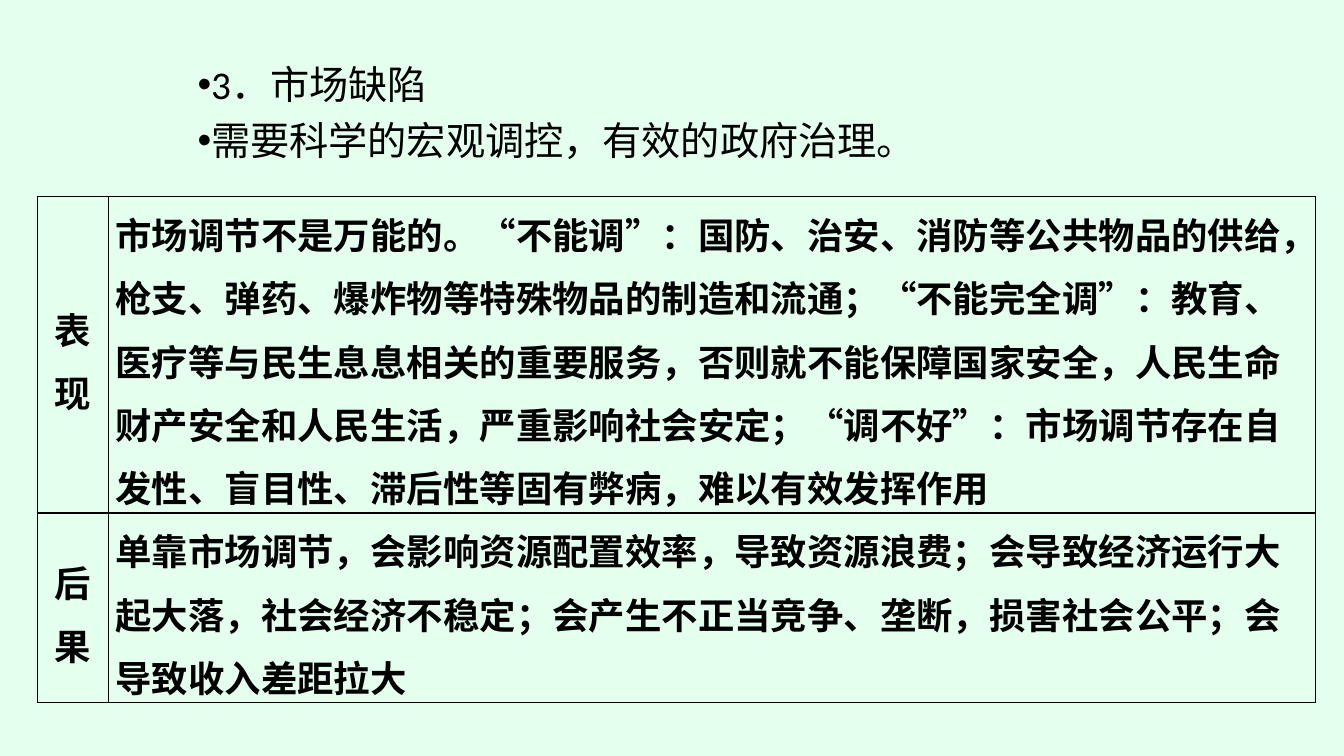
from lxml.etree import SubElement
from pptx import Presentation
from pptx.dml.color import RGBColor
from pptx.enum.text import MSO_ANCHOR as Anchor, PP_ALIGN as Align
from pptx.oxml import parse_xml
from pptx.oxml.ns import nsdecls, qn
from pptx.util import Pt

MINT = RGBColor(0xE4, 0xFF, 0xEE)
BLACK = RGBColor(0, 0, 0)

HEADINGS = ["3．市场缺陷", "需要科学的宏观调控，有效的政府治理。"]
ROWS = [
    (
        "表现",
        "市场调节不是万能的。“不能调”：国防、治安、消防等公共物品的供给，"
        "枪支、弹药、爆炸物等特殊物品的制造和流通；“不能完全调”：教育、"
        "医疗等与民生息息相关的重要服务，否则就不能保障国家安全，人民生命"
        "财产安全和人民生活，严重影响社会安定；“调不好”：市场调节存在自"
        "发性、盲目性、滞后性等固有弊病，难以有效发挥作用",
    ),
    (
        "后果",
        "单靠市场调节，会影响资源配置效率，导致资源浪费；会导致经济运行大"
        "起大落，社会经济不稳定；会产生不正当竞争、垄断，损害社会公平；会"
        "导致收入差距拉大",
    ),
]
COLUMN_WIDTHS = [Pt(51), Pt(862)]
ROW_HEIGHTS = [Pt(226), Pt(135.5)]


def style_font(font, size, latin, east_asian, bold=False):
    font.size = Pt(size)
    font.bold = bold
    font.name = latin
    font.color.rgb = BLACK
    SubElement(font._element, qn("a:ea"), typeface=east_asian)


def write_lines(frame, lines):
    frame.text = "\n".join(lines)
    return frame.paragraphs


def add_bullet(para):
    properties = para._p.get_or_add_pPr()
    properties.set("marL", str(Pt(18)))
    properties.set("indent", str(Pt(52)))
    SubElement(properties, qn("a:buFont"), typeface="Arial")
    SubElement(properties, qn("a:buChar"), char="•")


def add_headings(page):
    box = page.shapes.add_textbox(Pt(64), Pt(43), Pt(896), Pt(150))
    box.text_frame.word_wrap = True
    for para in write_lines(box.text_frame, HEADINGS):
        para.line_spacing = 0.9
        para.space_before = Pt(10)
        add_bullet(para)
        style_font(para.font, 28, "Calibri", "Calibri")


def add_borders(cell):
    properties = cell._tc.get_or_add_tcPr()
    for position, side in enumerate(("lnL", "lnR", "lnT", "lnB")):
        border = parse_xml(
            f'<a:{side} {nsdecls("a")} w="{Pt(1)}"><a:solidFill>'
            f'<a:srgbClr val="{BLACK}"/></a:solidFill></a:{side}>'
        )
        properties.insert(position, border)


def fill_cell(cell, lines, align):
    cell.fill.background()
    add_borders(cell)
    cell.vertical_anchor = Anchor.MIDDLE
    cell.margin_left = cell.margin_right = Pt(5)
    cell.margin_top = cell.margin_bottom = 0
    for para in write_lines(cell.text_frame, lines):
        para.alignment = align
        para.line_spacing = 1.2
        style_font(para.font, 26, "Times New Roman", "Noto Sans CJK SC", True)


def add_defects_table(page):
    frame = page.shapes.add_table(
        len(ROWS), 2, Pt(26.5), Pt(140.5), sum(COLUMN_WIDTHS), sum(ROW_HEIGHTS)
    )
    table = frame.table
    table.first_row = table.horz_banding = False
    for column, width in zip(table.columns, COLUMN_WIDTHS):
        column.width = width
    for index, (label, detail) in enumerate(ROWS):
        table.rows[index].height = ROW_HEIGHTS[index]
        fill_cell(table.cell(index, 0), list(label), Align.CENTER)
        fill_cell(table.cell(index, 1), [detail], Align.LEFT)


def main():
    deck = Presentation()
    deck.slide_width, deck.slide_height = Pt(960), Pt(540)
    page = deck.slides.add_slide(deck.slide_layouts[6])
    page.background.fill.solid()
    page.background.fill.fore_color.rgb = MINT
    add_headings(page)
    add_defects_table(page)
    deck.save("out.pptx")


if __name__ == "__main__":
    main()
